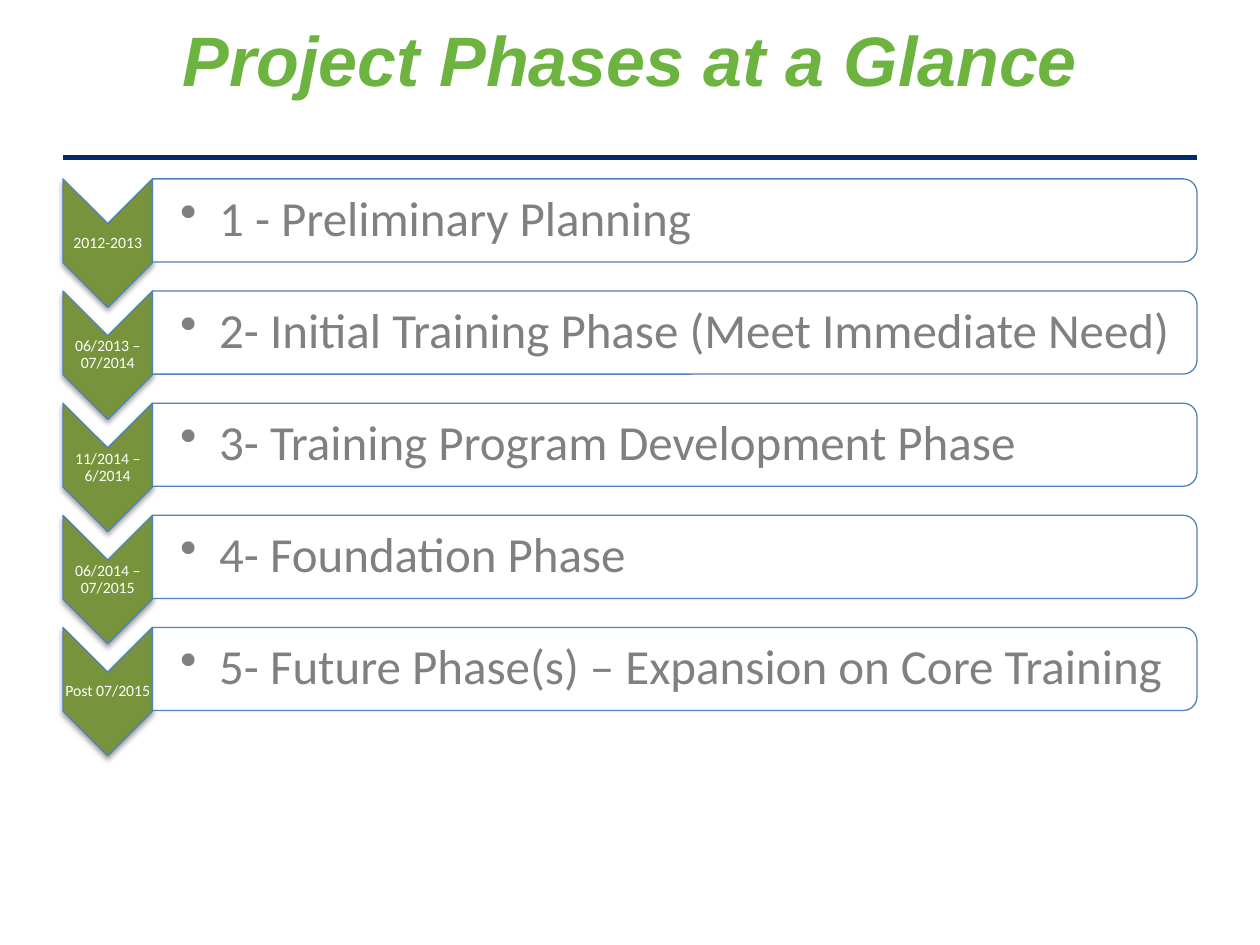
import pptx
import pptx.util
import pptx.dml.color
import pptx.enum.shapes
import pptx.enum.text
import pptx.oxml
import pptx.oxml.ns
from dataclasses import dataclass

Inches, Pt = pptx.util.Inches, pptx.util.Pt
SHAPE = pptx.enum.shapes.MSO_SHAPE
ANCHOR = pptx.enum.text.MSO_ANCHOR
ALIGN = pptx.enum.text.PP_ALIGN
NS = pptx.oxml.ns.nsdecls("a")

# Grid: one row per phase, a date column and a description column
MARGIN, SLIDE_W, SLIDE_H = 0.5, 10, 7.5
CONTENT_W = SLIDE_W - 2 * MARGIN
FIRST_ROW, ROW_PITCH = 1.42, 0.89
DATE_W, CHEVRON_H, PANEL_H = 0.71, 1.02, 0.66
PANEL_X, PANEL_W = MARGIN + DATE_W, CONTENT_W - DATE_W

GREEN, BLUE, NAVY = "77933C", "4F81BD", "032B6D"


@dataclass
class Phase:
    dates: str
    description: str


@dataclass
class Area:
    left: float
    top: float
    width: float
    height: float

    def lengths(self) -> list:
        return [Inches(v) for v in (self.left, self.top, self.width, self.height)]

    def turned(self) -> "Area":
        """The frame that covers this area once rotated by 90 degrees."""
        shift = (self.width - self.height) / 2
        return Area(self.left + shift, self.top - shift, self.height, self.width)


PHASES = [
    Phase("2012-2013", "1 - Preliminary Planning"),
    Phase("06/2013 – 07/2014", "2- Initial Training Phase (Meet Immediate Need)"),
    Phase("11/2014 – 6/2014", "3- Training Program Development Phase"),
    Phase("06/2014 – 07/2015", "4- Foundation Phase"),
    Phase("Post 07/2015", "5- Future Phase(s) – Expansion on Core Training"),
]


def color(code: str):
    return pptx.dml.color.RGBColor.from_string(code)


def add_run(paragraph, text: str, font: str, size: float, code: str):
    run = paragraph.add_run()
    run.text = text
    run.font.name, run.font.size = font, Pt(size)
    run.font.color.rgb = color(code)
    return run


def add_turned(group, kind, area: Area, fill: str):
    shape = group.shapes.add_shape(kind, *area.turned().lengths())
    shape.rotation = 90
    shape.shadow.inherit = False
    shape.fill.solid()
    shape.fill.fore_color.rgb = color(fill)
    shape.line.color.rgb = color(BLUE)
    shape.line.width = Pt(0.75)
    return shape


def add_label(group, area: Area, inset: float, left_inset: float):
    frame = group.shapes.add_textbox(*area.lengths()).text_frame
    frame.word_wrap = True
    frame.vertical_anchor = ANCHOR.MIDDLE
    frame.margin_left = Inches(left_inset)
    frame.margin_right = frame.margin_top = frame.margin_bottom = Inches(inset)
    paragraph = frame.paragraphs[0]
    paragraph.line_spacing = 0.9
    return paragraph


def add_bullet(paragraph) -> None:
    properties = paragraph._p.get_or_add_pPr()
    properties.set("marL", str(Inches(0.31)))
    properties.set("indent", str(-Inches(0.31)))
    properties.append(pptx.oxml.parse_xml(f'<a:buChar {NS} char="•"/>'))


def add_shadow(shape) -> None:
    effects = shape._element.spPr.find(pptx.oxml.ns.qn("a:effectLst"))
    effects.append(pptx.oxml.parse_xml(
        f'<a:outerShdw {NS} blurRad="{Pt(3.1)}" dist="{Pt(1.8)}" dir="5400000" '
        'rotWithShape="0"><a:srgbClr val="000000"><a:alpha val="35000"/>'
        '</a:srgbClr></a:outerShdw>'))


def draw_phase(group, row: int, phase: Phase) -> None:
    top = FIRST_ROW + row * ROW_PITCH

    # Date chevron
    chevron = add_turned(group, SHAPE.CHEVRON,
                         Area(MARGIN, top, DATE_W, CHEVRON_H), GREEN)
    add_shadow(chevron)
    dates = add_label(group, Area(MARGIN, top + DATE_W / 2, DATE_W, 0.31), 0.01, 0.01)
    dates.alignment = ALIGN.CENTER
    add_run(dates, phase.dates, "Calibri", 9, "FFFFFF")

    # Description panel
    panel = add_turned(group, SHAPE.ROUND_2_SAME_RECTANGLE,
                       Area(PANEL_X, top, PANEL_W, PANEL_H), "FFFFFF")
    fill = panel._element.spPr.find(".//" + pptx.oxml.ns.qn("a:srgbClr"))
    fill.append(pptx.oxml.parse_xml(f'<a:alpha {NS} val="90000"/>'))
    description = add_label(group, Area(PANEL_X, top + 0.03, PANEL_W - 0.04, 0.6),
                            0.02, 0.22)
    add_bullet(description)
    description.font.size = Pt(28)
    add_run(description, phase.description, "Calibri", 28, "808080")


def main() -> None:
    deck = pptx.Presentation()
    deck.slide_width, deck.slide_height = Inches(SLIDE_W), Inches(SLIDE_H)
    slide = deck.slides.add_slide(deck.slide_layouts[5])

    # Title and rule below it
    title = slide.shapes.title
    title.left, title.top, title.width, title.height = Area(
        MARGIN, 0.08, CONTENT_W, 1).lengths()
    title.text_frame.vertical_anchor = ANCHOR.TOP
    heading = title.text_frame.paragraphs[0]
    heading.alignment = ALIGN.CENTER
    run = add_run(heading, "Project Phases at a Glance", "Arial", 40, "6DB33F")
    run.font.bold = run.font.italic = True

    rule = slide.shapes.add_connector(
        pptx.enum.shapes.MSO_CONNECTOR.STRAIGHT, Inches(MARGIN), Inches(1.25),
        Inches(MARGIN + CONTENT_W), Inches(1.25))
    rule.line.color.rgb = color(NAVY)
    rule.line.width = Pt(3)
    rule._element.spPr.append(pptx.oxml.parse_xml(f"<a:effectLst {NS}/>"))

    # Phases
    timeline = slide.shapes.add_group_shape()
    for row, phase in enumerate(PHASES):
        draw_phase(timeline, row, phase)

    deck.save("out.pptx")


if __name__ == "__main__":
    main()
